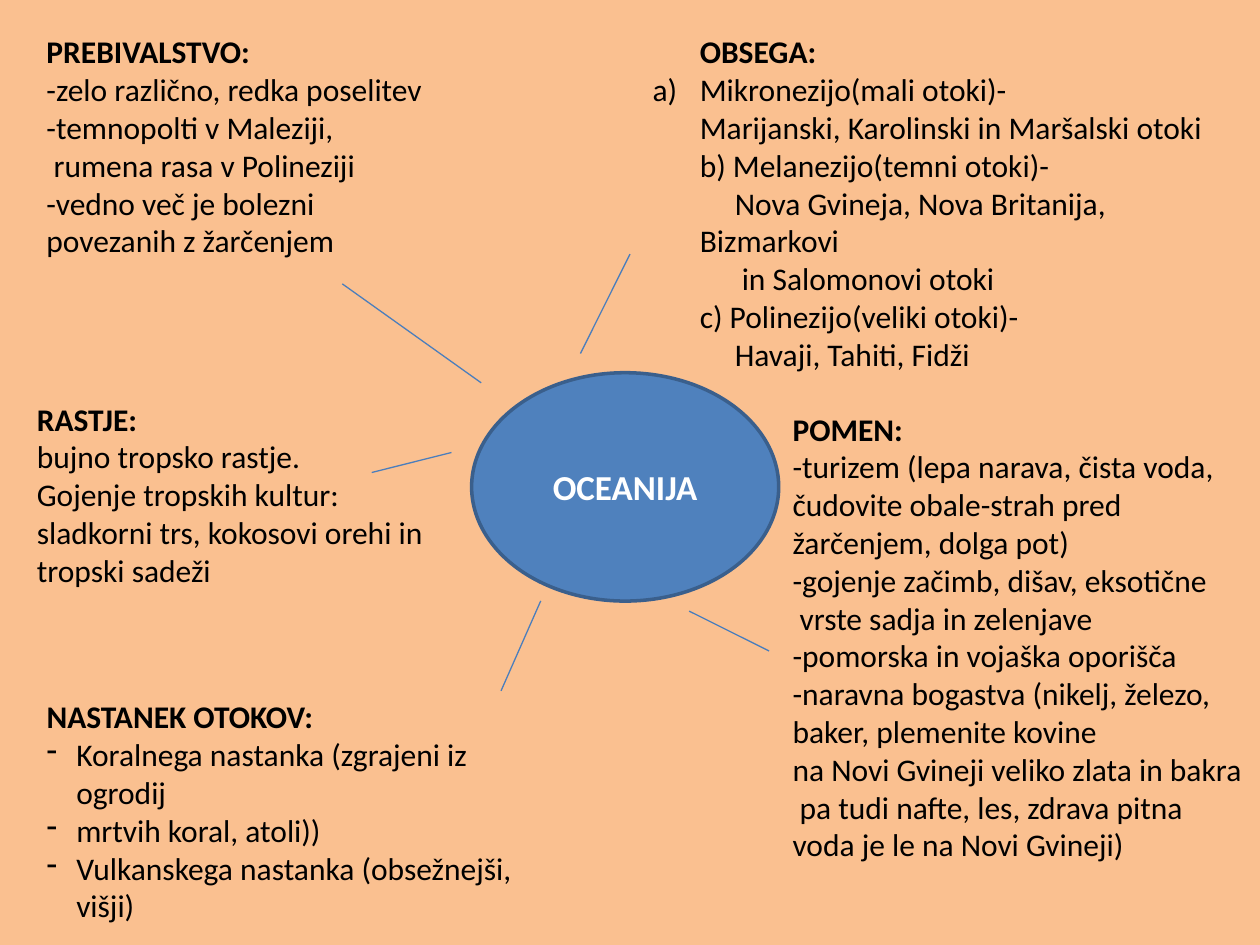
import pptx
import pptx.util
import pptx.dml.color
import pptx.enum.shapes
import pptx.enum.text
import pptx.oxml.ns
from lxml import etree

Pt = pptx.util.Pt
RGBColor = pptx.dml.color.RGBColor
qn = pptx.oxml.ns.qn

PEACH = RGBColor(0xFA, 0xC0, 0x90)
BLUE = RGBColor(0x4F, 0x81, 0xBD)
DARK_BLUE = RGBColor(0x3A, 0x5F, 0x8C)
LINE_BLUE = RGBColor(0x4B, 0x7E, 0xBC)
BLACK = RGBColor(0, 0, 0)
WHITE = RGBColor(0xFF, 0xFF, 0xFF)
FONT = "Calibri"

STYLES = {
    "plain": (0, 0, None),
    "dash": (17, -17, ("a:buChar", "char", "-")),
    "letter": (27, -27, ("a:buAutoNum", "type", "alphaLcParenR")),
    "inset": (27, 0, None),
    "sub": (27, 20, None),
    "subsub": (27, 24, None),
}

CENTRE = ("OCEANIJA", (269.5, 213, 175.5, 130.5))

TOPICS = [
    ("OBSEGA:", "inset", (365.8, 15, 338.4, 204), [
        ("letter", "Mikronezijo(mali otoki)-"),
        ("inset", "Marijanski, Karolinski in Maršalski otoki"),
        ("inset", "b) Melanezijo(temni otoki)-"),
        ("sub", "Nova Gvineja, Nova Britanija, Bizmarkovi"),
        ("subsub", "in Salomonovi otoki"),
        ("inset", "c) Polinezijo(veliki otoki)-"),
        ("sub", "Havaji, Tahiti, Fidži"),
    ]),
    ("POMEN:", "plain", (445.8, 230.5, 274.2, 291), [
        ("plain", "-turizem (lepa narava, čista voda,\nčudovite obale-strah pred"),
        ("plain", "žarčenjem, dolga pot)"),
        ("plain", "-gojenje začimb, dišav, eksotične\n vrste sadja in zelenjave"),
        ("plain", "-pomorska in vojaška oporišča"),
        ("plain", "-naravna bogastva (nikelj, železo,\nbaker, plemenite kovine"),
        ("plain", "na Novi Gvineji veliko zlata in bakra\n pa tudi nafte, les, zdrava pitna"),
        ("plain", "voda je le na Novi Gvineji)"),
    ]),
    ("PREBIVALSTVO:", "plain", (19.5, 15, 232, 160), [
        ("plain", "-zelo različno, redka poselitev"),
        ("plain", "-temnopolti v Maleziji,"),
        ("plain", " rumena rasa v Polineziji"),
        ("plain", "-vedno več je bolezni"),
        ("plain", "povezanih z žarčenjem"),
    ]),
    ("RASTJE:", "plain", (14, 224.8, 241.5, 116.5), [
        ("plain", "bujno tropsko rastje."),
        ("plain", "Gojenje tropskih kultur:"),
        ("plain", "sladkorni trs, kokosovi orehi in"),
        ("plain", "tropski sadeži"),
    ]),
    ("NASTANEK OTOKOV:", "plain", (19.5, 395, 306, 137), [
        ("dash", "Koralnega nastanka (zgrajeni iz ogrodij"),
        ("dash", "mrtvih koral, atoli))"),
        ("dash", "Vulkanskega nastanka (obsežnejši, višji)"),
    ]),
]

SPOKES = [
    (331.7, 202, 360, 145.2),
    (393.8, 349.2, 439.5, 372),
    (275, 218.8, 195.6, 162.2),
    (212.4, 270, 258, 258.6),
    (309, 343.4, 286.3, 394.8),
]


def add_run(p, text, size, color, bold):
    r = p.add_run()
    r.text = text
    r.font.name = FONT
    r.font.size = Pt(size)
    r.font.bold = bold
    r.font.color.rgb = color


def style_paragraph(p, style):
    margin, indent, bullet = STYLES[style]
    pPr = p._p.get_or_add_pPr()
    pPr.set("marL", str(Pt(margin)))
    pPr.set("indent", str(Pt(indent)))
    if bullet:
        tag, key, value = bullet
        etree.SubElement(pPr, qn(tag)).set(key, value)


def add_topic(slide, heading, heading_style, box, items):
    tf = slide.shapes.add_textbox(*map(Pt, box)).text_frame
    tf.word_wrap = True
    for i, (style, text) in enumerate([(heading_style, heading)] + items):
        p = tf.add_paragraph() if i else tf.paragraphs[0]
        style_paragraph(p, style)
        for j, line in enumerate(text.split("\n")):
            if j:
                p.add_line_break()
            add_run(p, line, 18, BLACK, i == 0)


def add_centre(slide, text, box):
    sp = slide.shapes.add_shape(pptx.enum.shapes.MSO_SHAPE.OVAL, *map(Pt, box))
    sp.shadow.inherit = False
    sp.fill.solid()
    sp.fill.fore_color.rgb = BLUE
    sp.line.color.rgb = DARK_BLUE
    sp.line.width = Pt(2)
    tf = sp.text_frame
    tf.vertical_anchor = pptx.enum.text.MSO_ANCHOR.MIDDLE
    p = tf.paragraphs[0]
    p.alignment = pptx.enum.text.PP_ALIGN.CENTER
    add_run(p, text, 20, WHITE, True)


def add_spoke(slide, ends):
    c = slide.shapes.add_connector(pptx.enum.shapes.MSO_CONNECTOR.STRAIGHT, *map(Pt, ends))
    c.line.color.rgb = LINE_BLUE
    c.line.width = Pt(0.75)
    etree.SubElement(c._element.spPr, qn("a:effectLst"))


def main():
    prs = pptx.Presentation()
    prs.slide_width, prs.slide_height = Pt(720), Pt(540)
    s = prs.slides.add_slide(prs.slide_layouts[6])
    s.background.fill.solid()
    s.background.fill.fore_color.rgb = PEACH
    add_centre(s, *CENTRE)
    for topic in TOPICS:
        add_topic(s, *topic)
    for ends in SPOKES:
        add_spoke(s, ends)
    prs.save("out.pptx")


if __name__ == "__main__":
    main()
